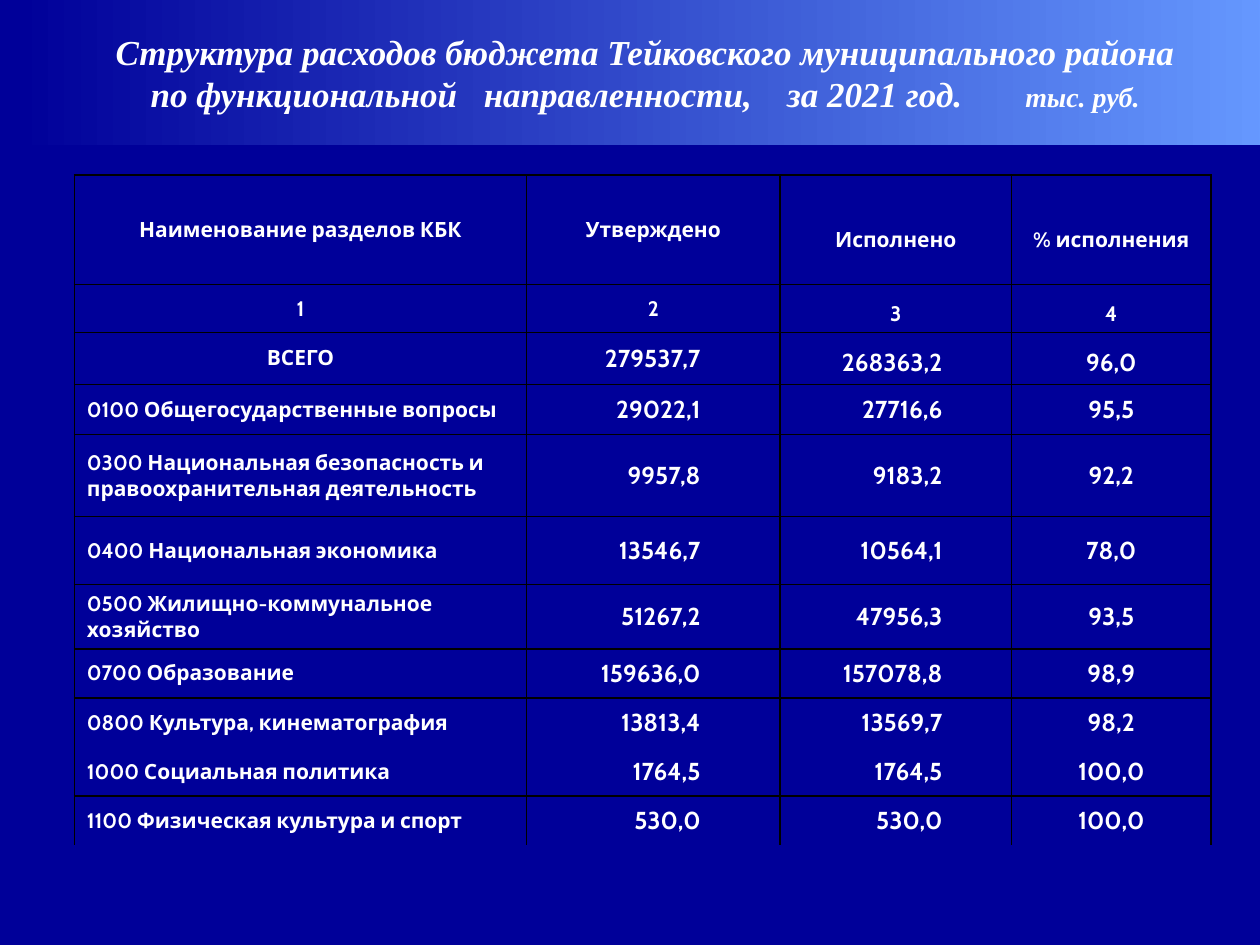
from lxml import etree
from pptx import Presentation
from pptx.dml.color import RGBColor
from pptx.enum.text import MSO_ANCHOR, MSO_AUTO_SIZE, PP_ALIGN
from pptx.oxml.ns import qn
from pptx.util import Inches, Pt

NAVY = RGBColor(0x00, 0x00, 0x99)
SKY = RGBColor(0x66, 0x99, 0xFF)
WHITE = RGBColor(0xFF, 0xFF, 0xFF)
BLACK = RGBColor(0x00, 0x00, 0x00)
LEFT, CENTER, RIGHT = PP_ALIGN.LEFT, PP_ALIGN.CENTER, PP_ALIGN.RIGHT
MIDDLE, BOTTOM = MSO_ANCHOR.MIDDLE, MSO_ANCHOR.BOTTOM
TITLE_ONLY = 5

COLUMN_WIDTHS = [3.59, 2.01, 1.84, 1.58]
ROW_HEIGHTS = [0.87, 0.38, 0.41, 0.4, 0.65, 0.54, 0.51] + [0.39] * 4
ROWS_WITHOUT_BOTTOM_LINE = (8, 10)
NUMBER_INSETS = {1: 0.63, 2: 0.55}  # right inset that lines up the figures

ROWS = [
    ("Наименование разделов КБК", "Утверждено", "Исполнено", "% исполнения"),
    ("1", "2", "3", "4"),
    ("ВСЕГО", "279537,7", "268363,2", "96,0"),
    ("0100 Общегосударственные вопросы", "29022,1", "27716,6", "95,5"),
    ("0300 Национальная безопасность и правоохранительная деятельность",
     "9957,8", "9183,2", "92,2"),
    ("0400 Национальная экономика", "13546,7", "10564,1", "78,0"),
    ("0500 Жилищно-коммунальное хозяйство", "51267,2", "47956,3", "93,5"),
    ("0700 Образование", "159636,0", "157078,8", "98,9"),
    ("0800 Культура, кинематография", "13813,4", "13569,7", "98,2"),
    ("1000 Социальная политика", "1764,5", "1764,5", "100,0"),
    ("1100 Физическая культура и спорт", "530,0", "530,0", "100,0"),
]


def add_text(paragraph, text, size=12, font="Cabin", italic=False, align=CENTER,
             spacing=0):
    paragraph.alignment = align
    run = paragraph.add_run()
    run.text = text
    run.font.size = Pt(size)
    run.font.name = font
    run.font.bold = True
    run.font.italic = italic
    run.font.color.rgb = WHITE
    if spacing:
        run._r.get_or_add_rPr().set("spc", str(spacing * 100))


def set_borders(cell, sides):
    properties = cell._tc.get_or_add_tcPr()
    for position, side in enumerate(("lnL", "lnR", "lnT", "lnB")):
        line = etree.Element(qn("a:" + side), w=str(Pt(1)))
        if side in sides:
            fill = etree.SubElement(line, qn("a:solidFill"))
            etree.SubElement(fill, qn("a:srgbClr"), val=str(BLACK))
        else:
            etree.SubElement(line, qn("a:noFill"))
        properties.insert(position, line)


presentation = Presentation()
presentation.slide_width = Inches(10)
presentation.slide_height = Inches(7.5)
slide = presentation.slides.add_slide(presentation.slide_layouts[TITLE_ONLY])
slide.background.fill.solid()
slide.background.fill.fore_color.rgb = NAVY

# Title band
title = slide.shapes.title
title.left, title.top = Inches(0.12), 0
title.width, title.height = presentation.slide_width, Inches(1.15)
title.fill.gradient()
title.fill.gradient_angle = 0
for stop, color in zip(title.fill.gradient_stops, (NAVY, SKY)):
    stop.color.rgb = color
frame = title.text_frame
frame.auto_size = MSO_AUTO_SIZE.NONE
frame.word_wrap = True
frame.vertical_anchor = MIDDLE
title_format = {"font": "Times New Roman", "italic": True}
add_text(frame.paragraphs[0],
         "Структура расходов бюджета Тейковского муниципального района",
         size=20, **title_format)
second_line = frame.add_paragraph()
for text, size, spacing in [
    ("по функциональной", 20, 0), (" ", 20, 10),
    ("направленности,", 20, 0), (" ", 20, 15),
    ("за 2021 год.", 20, 0), (" ", 20, 31),
    ("тыс. руб.", 16, 0),
]:
    add_text(second_line, text, size=size, spacing=spacing, **title_format)

# Budget table
table = slide.shapes.add_table(
    len(ROWS), len(COLUMN_WIDTHS), Inches(0.59), Inches(1.39),
    Inches(sum(COLUMN_WIDTHS)), Inches(sum(ROW_HEIGHTS))).table
table.first_row = table.horz_banding = False
for column, width in zip(table.columns, COLUMN_WIDTHS):
    column.width = Inches(width)
for row, height in zip(table.rows, ROW_HEIGHTS):
    row.height = Inches(height)

for row_index, values in enumerate(ROWS):
    for column_index, value in enumerate(values):
        cell = table.cell(row_index, column_index)
        is_number = row_index >= 2 and column_index >= 1
        in_upper_rows = row_index <= 2
        cell.fill.background()
        cell.vertical_anchor = BOTTOM if in_upper_rows and column_index >= 2 else MIDDLE
        cell.margin_left = cell.margin_right = Inches(0.1)
        vertical_inset = 0 if is_number and not in_upper_rows else 0.05
        cell.margin_top = cell.margin_bottom = Inches(vertical_inset)
        if row_index == 0 and column_index >= 2:
            cell.margin_bottom = Inches(0.25)

        align = CENTER
        if is_number and column_index in NUMBER_INSETS:
            align = RIGHT
            cell.margin_right = Inches(NUMBER_INSETS[column_index])
        elif column_index == 0 and not in_upper_rows:
            align = LEFT
        add_text(cell.text_frame.paragraphs[0], value,
                 size=14 if is_number else 12, align=align)

        sides = {"lnL", "lnR", "lnT", "lnB"}
        if row_index in ROWS_WITHOUT_BOTTOM_LINE:
            sides.remove("lnB")
        if row_index - 1 in ROWS_WITHOUT_BOTTOM_LINE:
            sides.remove("lnT")
        set_borders(cell, sides)

presentation.save("out.pptx")
